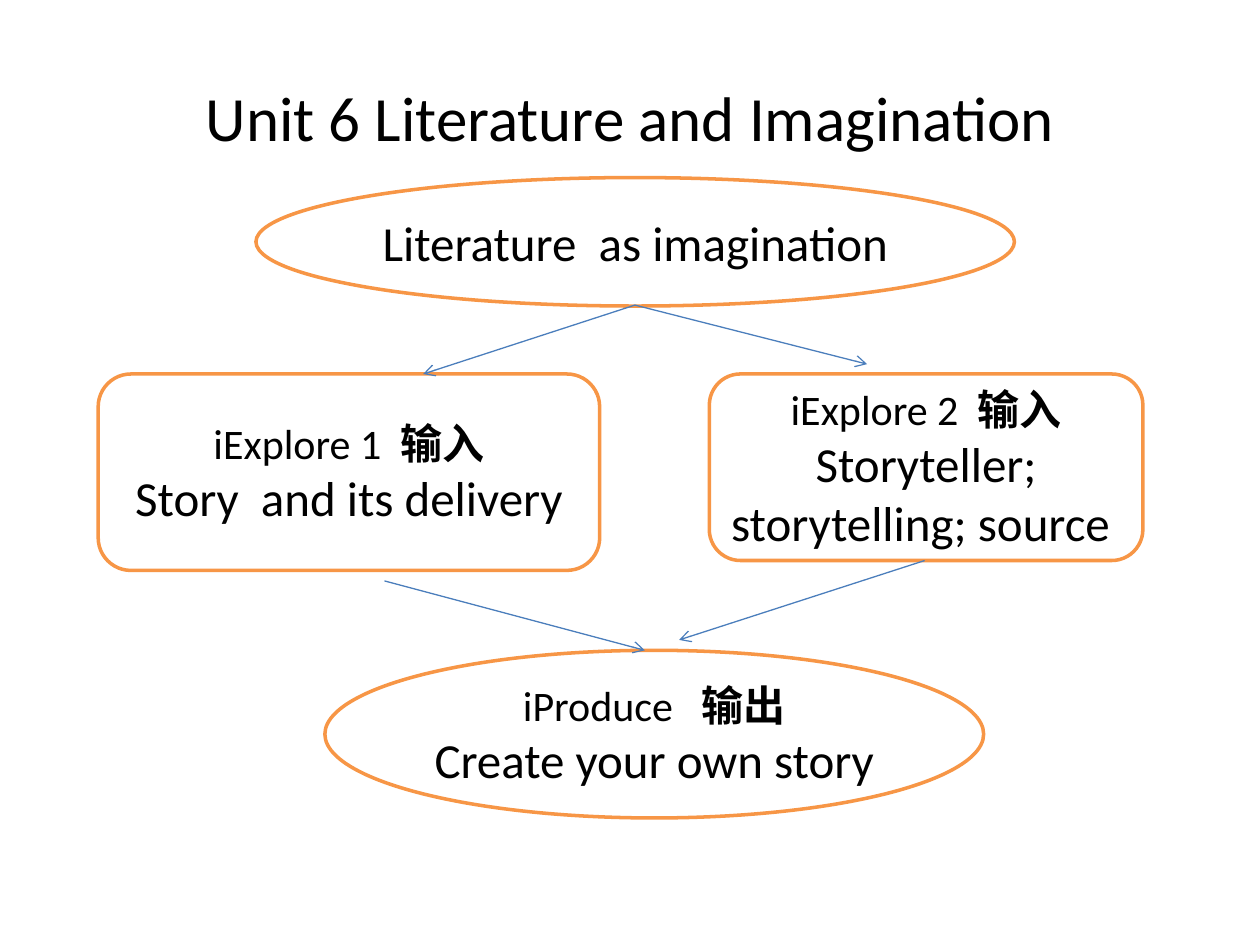
from dataclasses import dataclass

from lxml import etree
from pptx import Presentation
from pptx.dml.color import RGBColor
from pptx.enum.shapes import MSO_CONNECTOR, MSO_SHAPE
from pptx.enum.text import MSO_ANCHOR, PP_ALIGN
from pptx.oxml.ns import qn
from pptx.util import Cm, Pt

OVAL = MSO_SHAPE.OVAL
ROUND = MSO_SHAPE.ROUNDED_RECTANGLE
STRAIGHT = MSO_CONNECTOR.STRAIGHT
MIDDLE = MSO_ANCHOR.MIDDLE
CENTER = PP_ALIGN.CENTER


@dataclass(frozen=True)
class Theme:
    font: str = "Calibri"
    ink: RGBColor = RGBColor(0, 0, 0)
    paper: RGBColor = RGBColor(255, 255, 255)
    edge: RGBColor = RGBColor.from_string("F79646")
    arrow: RGBColor = RGBColor.from_string("4B7EBC")
    title: int = 36
    body: int = 28
    label: int = 24
    thick: float = 2
    thin: float = 0.75


THEME = Theme()

NODES = [
    (OVAL, (5.16, 3.58, 15.29, 2.59),
     [[("Literature  as imagination", THEME.body, False)]]),
    (ROUND, (1.98, 7.54, 10.11, 3.96),
     [[("iExplore 1  ", THEME.label, False), ("输入", THEME.label, True)],
      [("Story  and its delivery", THEME.body, False)]]),
    (ROUND, (14.3, 7.54, 8.74, 3.76),
     [[("iExplore 2  ", THEME.label, False), ("输入", THEME.label, True)],
      [("Storyteller; storytelling; source ", THEME.body, False)]]),
    (OVAL, (6.55, 13.11, 13.28, 3.38),
     [[("iProduce   ", THEME.label, False), ("输出", THEME.label, True)],
      [("Create your own story", THEME.body, False)]]),
]

ARROWS = [
    (12.8, 6.15, 8.53, 7.54),
    (12.8, 6.15, 17.48, 7.34),
    (7.75, 11.71, 13, 13.11),
    (18.64, 11.3, 13.69, 12.9),
]


def style(item, form):
    for name, value in form.items():
        setattr(item, name, value)


def write(frame, lines):
    style(frame, {"word_wrap": True, "vertical_anchor": MIDDLE})
    for i, line in enumerate(lines):
        para = frame.add_paragraph() if i else frame.paragraphs[0]
        para.alignment = CENTER
        for text, size, bold in line:
            run = para.add_run()
            run.text = text
            style(run.font, {"name": THEME.font, "size": Pt(size), "bold": bold})
            run.font.color.rgb = THEME.ink


def add_title(slide, text):
    box = slide.shapes.add_textbox(Cm(1.27), Cm(0.76), Cm(22.86), Cm(3.18))
    write(box.text_frame, [[(text, THEME.title, False)]])


def add_node(slide, kind, place, lines):
    node = slide.shapes.add_shape(kind, *map(Cm, place))
    node.shadow.inherit = False
    node.fill.solid()
    node.fill.fore_color.rgb = THEME.paper
    node.line.color.rgb = THEME.edge
    node.line.width = Pt(THEME.thick)
    write(node.text_frame, lines)


def add_arrow(slide, ends):
    link = slide.shapes.add_connector(STRAIGHT, *map(Cm, ends))
    link.line.color.rgb = THEME.arrow
    link.line.width = Pt(THEME.thin)
    etree.SubElement(link.line._get_or_add_ln(), qn("a:tailEnd"), type="arrow")
    etree.SubElement(link._element.spPr, qn("a:effectLst"))


def main():
    deck = Presentation()
    style(deck, {"slide_width": Cm(25.4), "slide_height": Cm(19.05)})
    slide = deck.slides.add_slide(deck.slide_layouts[6])
    add_title(slide, "Unit 6 Literature and Imagination")
    for node in NODES:
        add_node(slide, *node)
    for ends in ARROWS:
        add_arrow(slide, ends)
    deck.save("out.pptx")


if __name__ == "__main__":
    main()
